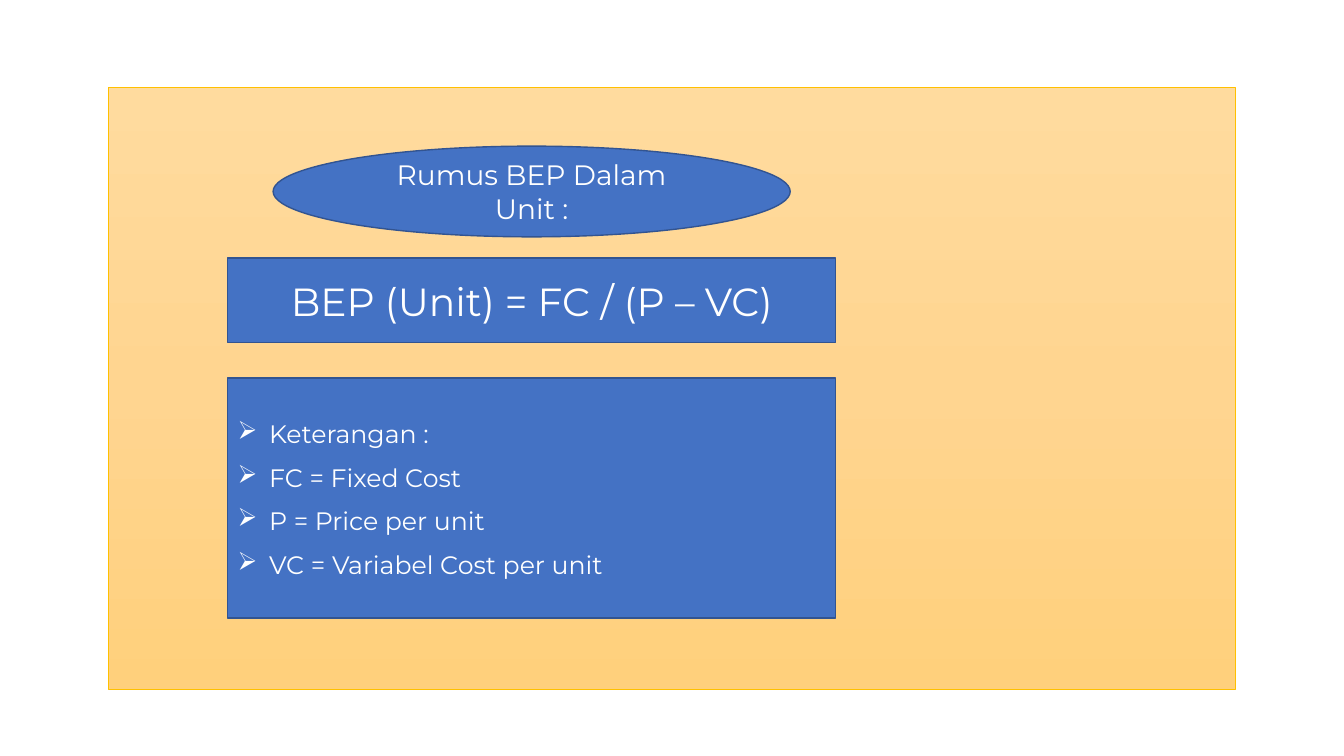
from copy import deepcopy
from dataclasses import dataclass

from lxml import etree
from pptx import Presentation
from pptx.dml.color import RGBColor
from pptx.enum.shapes import MSO_SHAPE
from pptx.enum.text import MSO_ANCHOR, PP_ALIGN
from pptx.oxml.ns import qn
from pptx.shapes.autoshape import Shape
from pptx.slide import Slide
from pptx.util import Pt

RECTANGLE, OVAL = MSO_SHAPE.RECTANGLE, MSO_SHAPE.OVAL
CENTER, JUSTIFY = PP_ALIGN.CENTER, PP_ALIGN.JUSTIFY
MIDDLE = MSO_ANCHOR.MIDDLE


@dataclass(frozen=True)
class Theme:
    font: str = "Montserrat"
    text: str = "FFFFFF"
    box_fill: str = "4472C4"
    box_line: str = "325491"
    panel_line: str = "FFC000"
    panel_gradient: tuple[str, ...] = ("FFDB9E", "FFD590", "FFD07C")
    formula_size: float = 28
    title_size: float = 20
    legend_size: float = 18


@dataclass(frozen=True)
class Box:
    kind: MSO_SHAPE
    left: float
    top: float
    width: float
    height: float
    lines: tuple[str, ...] = ()
    size: float = 0
    align: PP_ALIGN = CENTER
    bullet: str = ""


THEME = Theme()
PANEL = Box(RECTANGLE, 77.76, 62.64, 804.96, 429.84)
COLUMN_LEFT, COLUMN_WIDTH = 162.72, 434.16
BOXES = (
    Box(RECTANGLE, COLUMN_LEFT, 184.32, COLUMN_WIDTH, 60.48,
        ("BEP (Unit) = FC / (P – VC)",), THEME.formula_size),
    Box(RECTANGLE, COLUMN_LEFT, 270, COLUMN_WIDTH, 171.36,
        ("Keterangan :", "FC = Fixed Cost", "P = Price per unit",
         "VC = Variabel Cost per unit"),
        THEME.legend_size, JUSTIFY, "➢"),
    Box(OVAL, 195.12, 104.4, 369.36, 64.8,
        ("Rumus BEP Dalam Unit :",), THEME.title_size),
)


def add_shape(slide: Slide, box: Box, line: str, line_width: float) -> Shape:
    shape = slide.shapes.add_shape(
        box.kind, Pt(box.left), Pt(box.top), Pt(box.width), Pt(box.height))
    shape.shadow.inherit = False
    shape.line.color.rgb = RGBColor.from_string(line)
    shape.line.width = Pt(line_width)
    return shape


def fill_gradient(shape: Shape, colors: tuple[str, ...]) -> None:
    """Spread the colours evenly from top to bottom."""
    shape.fill.gradient()
    shape.fill.gradient_angle = 270
    stop_list = next(shape.element.iter(qn("a:gsLst")))
    for _ in colors[len(stop_list):]:
        stop_list.append(deepcopy(stop_list[0]))
    for index, (stop, color) in enumerate(zip(shape.fill.gradient_stops, colors)):
        stop.position = index / (len(colors) - 1)
        stop.color.rgb = RGBColor.from_string(color)


def write_text(shape: Shape, lines: tuple[str, ...], *, size: float,
               align: PP_ALIGN, bullet: str) -> None:
    frame = shape.text_frame
    frame.word_wrap = True
    frame.vertical_anchor = MIDDLE
    for index, line in enumerate(lines):
        paragraph = frame.paragraphs[0] if index == 0 else frame.add_paragraph()
        paragraph.alignment = align
        if bullet:
            properties = paragraph._p.get_or_add_pPr()
            properties.set("marL", str(Pt(22.5)))
            properties.set("indent", str(Pt(-22.5)))
            etree.SubElement(properties, qn("a:buChar"), char=bullet)
            paragraph.line_spacing = 1.07
            paragraph.space_after = Pt(8)
        run = paragraph.add_run()
        run.text = line
        run.font.name = THEME.font
        run.font.size = Pt(size)
        run.font.color.rgb = RGBColor.from_string(THEME.text)


def main() -> None:
    presentation = Presentation()
    presentation.slide_width, presentation.slide_height = Pt(960), Pt(540)
    slide = presentation.slides.add_slide(presentation.slide_layouts[6])

    # Background panel
    panel = add_shape(slide, PANEL, THEME.panel_line, 0.5)
    fill_gradient(panel, THEME.panel_gradient)

    # Formula, legend and title
    for box in BOXES:
        shape = add_shape(slide, box, THEME.box_line, 1)
        shape.fill.solid()
        shape.fill.fore_color.rgb = RGBColor.from_string(THEME.box_fill)
        write_text(shape, box.lines, size=box.size, align=box.align,
                   bullet=box.bullet)

    presentation.save("out.pptx")


if __name__ == "__main__":
    main()
